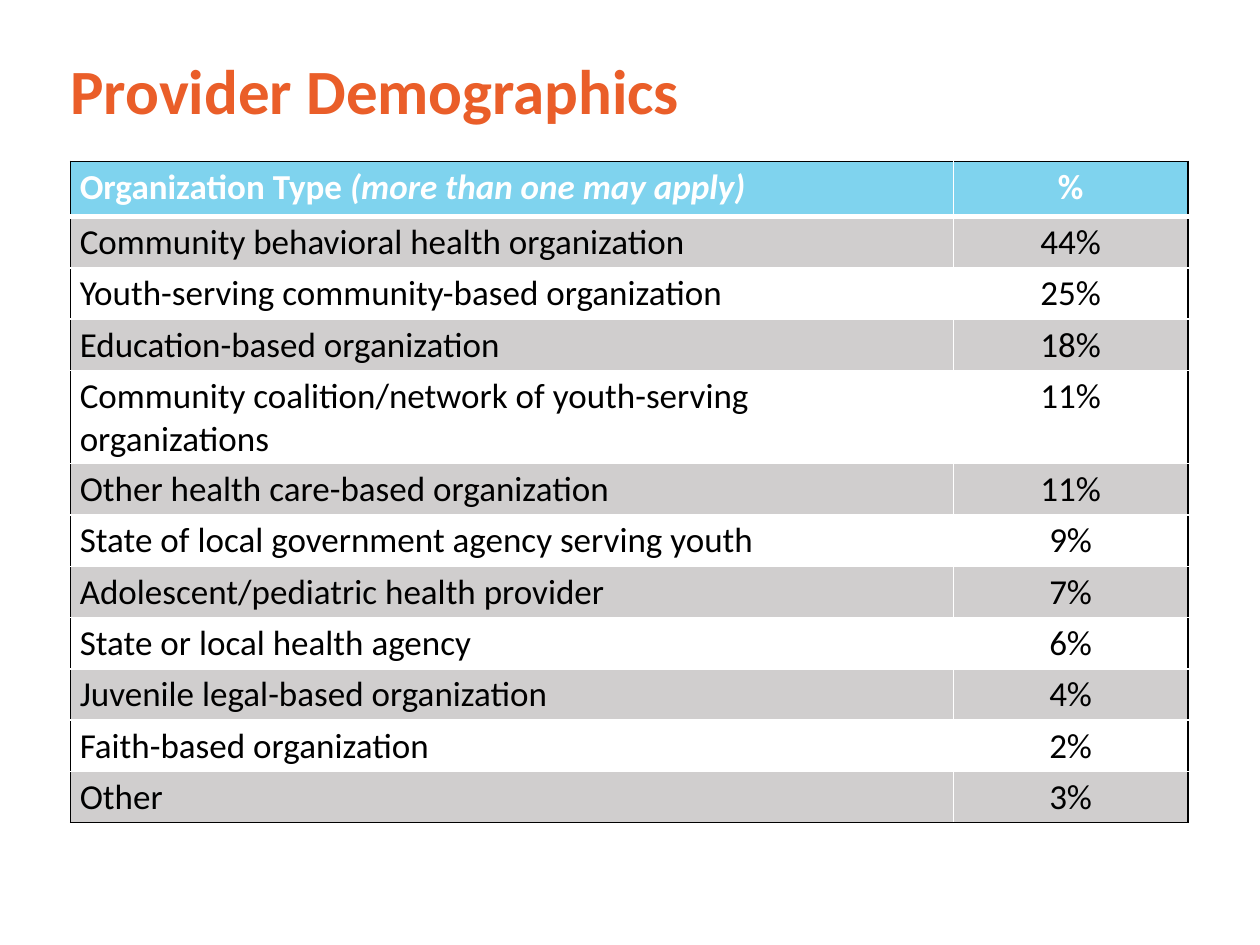
from lxml import etree
from pptx import Presentation
from pptx.dml.color import RGBColor
from pptx.enum.text import MSO_ANCHOR, PP_ALIGN
from pptx.oxml.ns import qn
from pptx.util import Pt

CENTER, LEFT = PP_ALIGN.CENTER, PP_ALIGN.LEFT
MIDDLE = MSO_ANCHOR.MIDDLE

FONT = "Calibri"
ORANGE, SKY, GRAY = "EA5E29", "7FD3EE", "D0CECE"
WHITE, BLACK = "FFFFFF", "000000"

TITLE = "Provider Demographics"
HEADER = (("Organization Type ", "(more than one may apply)"), ("%",))
ORGANIZATIONS = [
    ("Community behavioral health organization", "44%"),
    ("Youth-serving community-based organization", "25%"),
    ("Education-based organization", "18%"),
    ("Community coalition/network of youth-serving organizations", "11%"),
    ("Other health care-based organization", "11%"),
    ("State of local government agency serving youth", "9%"),
    ("Adolescent/pediatric health provider", "7%"),
    ("State or local health agency", "6%"),
    ("Juvenile legal-based organization", "4%"),
    ("Faith-based organization", "2%"),
    ("Other", "3%"),
]
COLUMN_WIDTHS = (504.5, 134.1)
HEADER_HEIGHT, ROW_HEIGHT = 31.5, 25.2


def color(value):
    return RGBColor.from_string(value)


def set_font(font, size, value, bold):
    font.name, font.size, font.bold = FONT, Pt(size), bold
    font.color.rgb = color(value)


def set_borders(cell, borders):
    """Draw the (side, colour, width) borders; they come before the fill."""
    properties = cell._tc.get_or_add_tcPr()
    for position, (side, value, width) in enumerate(borders):
        line = etree.Element(qn(f"a:ln{side}"), w=str(int(Pt(width))))
        solid = etree.SubElement(line, qn("a:solidFill"))
        etree.SubElement(solid, qn("a:srgbClr"), val=value)
        properties.insert(position, line)


def main():
    deck = Presentation()
    deck.slide_width, deck.slide_height = Pt(720), Pt(540)
    slide = deck.slides.add_slide(deck.slide_layouts[6])

    # Title
    title = slide.shapes.add_textbox(Pt(33.1), Pt(22.3), Pt(653), Pt(63.4)).text_frame
    title.word_wrap = True
    title.vertical_anchor = MIDDLE
    heading = title.paragraphs[0]
    heading.text = TITLE
    heading.line_spacing = 0.9
    set_font(heading.font, 36, ORANGE, True)

    # Table grid
    rows = [HEADER] + [((name,), (share,)) for name, share in ORGANIZATIONS]
    last_row, last_column = len(rows) - 1, len(COLUMN_WIDTHS) - 1
    heights = [HEADER_HEIGHT] + [ROW_HEIGHT] * last_row
    table = slide.shapes.add_table(
        len(rows), len(COLUMN_WIDTHS), Pt(40.3), Pt(92.2),
        Pt(sum(COLUMN_WIDTHS)), Pt(sum(heights))).table
    for column, width in zip(table.columns, COLUMN_WIDTHS):
        column.width = Pt(width)
    for row, height in zip(table.rows, heights):
        row.height = Pt(height)

    # Cells: black outer frame, white inner rules, banded rows
    for r, row in enumerate(rows):
        is_header = r == 0
        for c, parts in enumerate(row):
            cell = table.cell(r, c)
            cell.margin_left = cell.margin_right = Pt(5.3)
            cell.margin_top = cell.margin_bottom = Pt(2.65)
            cell.fill.solid()
            cell.fill.fore_color.rgb = color(
                SKY if is_header else GRAY if r % 2 else WHITE)
            set_borders(cell, (
                ("L", BLACK if c == 0 else WHITE, 1),
                ("R", BLACK if c == last_column else WHITE, 1),
                ("T", BLACK if is_header else WHITE, 3 if r == 1 else 1),
                ("B", BLACK if r == last_row else WHITE, 3 if is_header else 1),
            ))
            paragraph = cell.text_frame.paragraphs[0]
            paragraph.alignment = CENTER if c else LEFT
            set_font(paragraph.font, 20, WHITE if is_header else BLACK, is_header)
            for i, part in enumerate(parts):
                run = paragraph.add_run()
                run.text = part
                if i:
                    run.font.italic = True

    deck.save("out.pptx")


if __name__ == "__main__":
    main()
